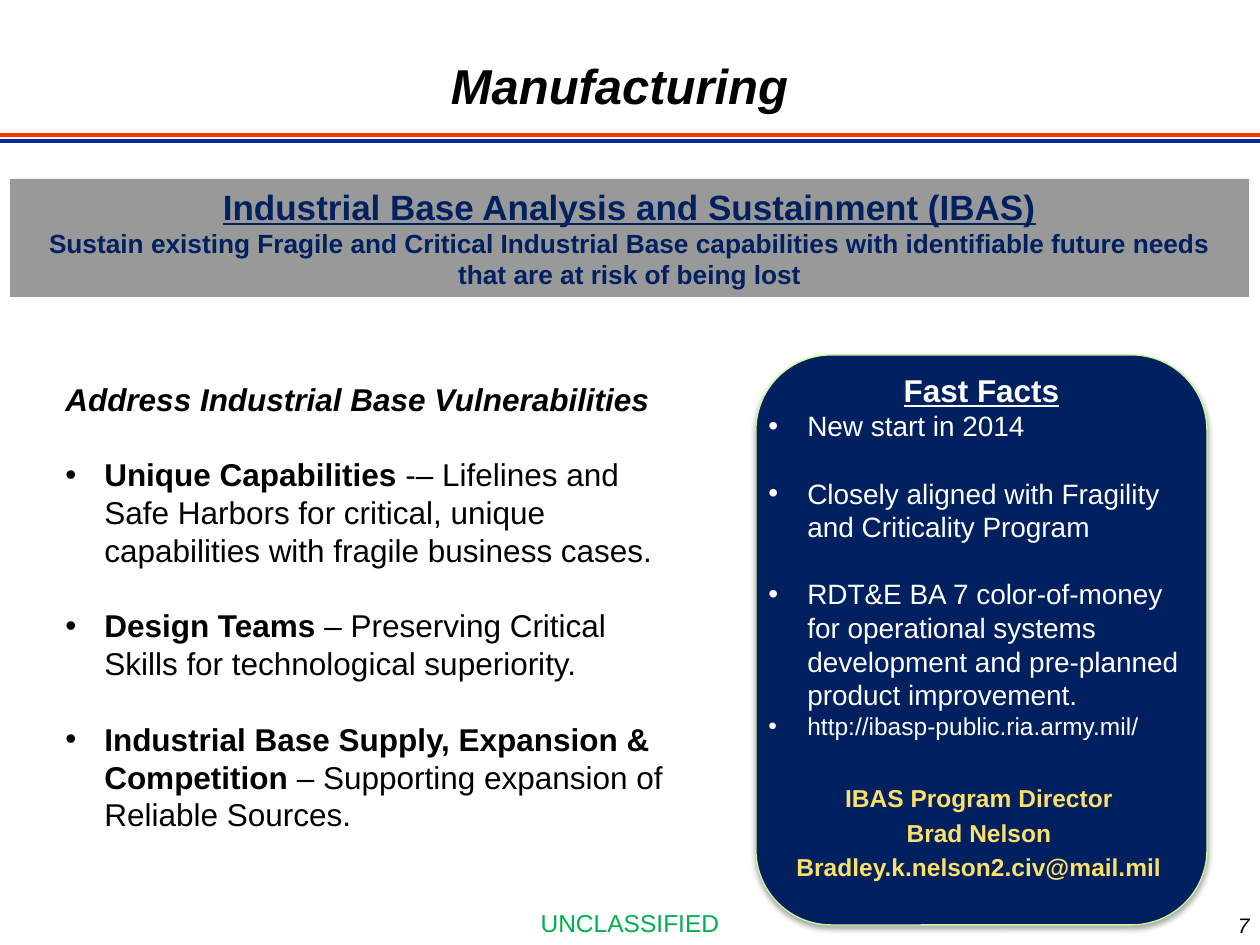
from lxml.etree import SubElement
from pptx import Presentation
from pptx.dml.color import RGBColor
from pptx.enum.shapes import MSO_CONNECTOR, MSO_SHAPE
from pptx.enum.text import MSO_ANCHOR, PP_ALIGN as ALIGN
from pptx.oxml.ns import qn
from pptx.util import Pt

EMU_PER_PX = 914400 / 126
INDENT = 39
LEADING = 1.2  # line pitch as a multiple of the type size
FONT = "Arial"

BLACK = RGBColor(0x00, 0x00, 0x00)
WHITE = RGBColor(0xFF, 0xFF, 0xFF)
NAVY = RGBColor(0x00, 0x20, 0x60)
GREY = RGBColor(0x99, 0x99, 0x99)
YELLOW = RGBColor(0xFD, 0xE0, 0x67)
GREEN = RGBColor(0x00, 0xB0, 0x50)
LIME = RGBColor(0xC8, 0xFC, 0x93)
RULE_BLUE = RGBColor(0x03, 0x2A, 0xA1)
RULE_RED = RGBColor(0xFF, 0x33, 0x00)

CAPABILITIES = [
    ("Unique Capabilities ",
     "-– Lifelines and Safe Harbors for critical, unique capabilities "
     "with fragile business cases."),
    ("Design Teams ",
     "– Preserving Critical Skills for technological superiority."),
    ("Industrial Base Supply, Expansion & Competition",
     " – Supporting expansion of Reliable Sources."),
]
# text, size, space before
FACTS = [
    ("New start in 2014", 16, 0),
    ("Closely aligned with Fragility and Criticality Program", 16, 19.2),
    ("RDT&E BA 7 color-of-money for operational systems development and "
     "pre-planned product improvement.", 16, 19.2),
    ("http://ibasp-public.ria.army.mil/", 14, 0),
]
CONTACT = ["IBAS Program Director", "Brad Nelson",
           "Bradley.k.nelson2.civ@mail.mil"]


def px(length):
    return round(length * EMU_PER_PX)


def add_rule(slide, y, color, width):
    rule = slide.shapes.add_connector(
        MSO_CONNECTOR.STRAIGHT, 0, px(y), px(1260), px(y))
    rule.line.color.rgb = color
    rule.line.width = Pt(width)
    SubElement(rule._element.spPr, qn("a:effectLst"))


def add_panel(slide, preset, box, fill):
    panel = slide.shapes.add_shape(preset, *map(px, box))
    panel.shadow.inherit = False
    panel.fill.solid()
    panel.fill.fore_color.rgb = fill
    panel.line.fill.background()
    return panel


def add_shadow(panel):
    effects = panel._element.spPr.find(qn("a:effectLst"))
    shadow = SubElement(effects, qn("a:outerShdw"), blurRad=str(Pt(3.1)),
                        dist=str(Pt(1.8)), dir="5400000", rotWithShape="0")
    color = SubElement(shadow, qn("a:srgbClr"), val="000000")
    SubElement(color, qn("a:alpha"), val="35000")


def add_text_box(slide, box):
    frame = slide.shapes.add_textbox(*map(px, box)).text_frame
    frame.word_wrap = True
    return frame


def add_bullet(paragraph):
    properties = paragraph._p.get_or_add_pPr()
    properties.set("marL", str(px(INDENT)))
    properties.set("indent", str(-px(INDENT)))
    SubElement(properties, qn("a:buFont"), typeface=FONT)
    SubElement(properties, qn("a:buChar"), char="•")


def add_line(frame, text, size, color, align=ALIGN.LEFT, before=0, bullet=False,
             bold=False, italic=False, underline=False):
    """Fill the frame's empty first paragraph, or append a new one."""
    paragraph = frame.paragraphs[0]
    if paragraph.runs:
        paragraph = frame.add_paragraph()
    paragraph.text = text
    if bullet:
        add_bullet(paragraph)
    paragraph.alignment = align
    paragraph.line_spacing = Pt(size * LEADING)
    paragraph.space_before = Pt(before)
    font = paragraph.runs[0].font
    font.name, font.size, font.color.rgb = FONT, Pt(size), color
    font.bold, font.italic, font.underline = bold, italic, underline
    return paragraph


def add_plain_run(paragraph, text, size, color):
    run = paragraph.add_run()
    run.text = text
    run.font.name, run.font.size, run.font.bold = FONT, Pt(size), False
    run.font.color.rgb = color


def add_frame_elements(slide):
    add_rule(slide, 141, RULE_BLUE, 2.25)
    add_rule(slide, 135, RULE_RED, 2)
    marking = add_text_box(slide, (0, 902, 1260, 43))
    add_line(marking, "UNCLASSIFIED", 14, GREEN, ALIGN.CENTER)
    title = add_text_box(slide, (126, 42, 987, 94))
    title.vertical_anchor = MSO_ANCHOR.MIDDLE
    heading = add_line(title, "Manufacturing", 28, BLACK, ALIGN.CENTER,
                       bold=True, italic=True)
    heading.line_spacing = 0.85
    number = add_text_box(slide, (1000, 906, 262, 34))
    add_line(number, "7", 12, BLACK, ALIGN.RIGHT, italic=True)


def add_banner(slide):
    banner = add_panel(slide, MSO_SHAPE.RECTANGLE, (10, 179, 1239, 118), GREY)
    frame = banner.text_frame
    frame.word_wrap = True
    frame.vertical_anchor = MSO_ANCHOR.TOP
    add_line(frame, "Industrial Base Analysis and Sustainment (IBAS)", 20, NAVY,
             ALIGN.CENTER, bold=True, underline=True)
    add_line(frame, "Sustain existing Fragile and Critical Industrial Base "
             "capabilities with identifiable future needs that are at risk of "
             "being lost", 15, NAVY, ALIGN.CENTER, bold=True)


def add_capabilities(slide):
    frame = add_text_box(slide, (53, 381, 640, 464))
    heading = add_line(frame, "Address Industrial Base Vulnerabilities", 18,
                       BLACK, bold=True, italic=True)
    heading.line_spacing = Pt(17.3)
    for name, detail in CAPABILITIES:
        item = add_line(frame, name, 18, BLACK, before=21.6, bullet=True,
                        bold=True)
        add_plain_run(item, detail, 18, BLACK)


def add_fast_facts(slide):
    card = add_panel(slide, MSO_SHAPE.ROUNDED_RECTANGLE,
                     (756, 355, 451, 570), NAVY)
    card.line.color.rgb = LIME
    card.line.width = Pt(0.75)
    add_shadow(card)

    contact = add_text_box(slide, (777, 777, 404, 120))
    for index, text in enumerate(CONTACT):
        add_line(contact, text, 14, YELLOW, ALIGN.CENTER,
                 before=2.8 if index else 0, bold=True)

    facts = add_text_box(slide, (756, 365, 451, 386))
    add_line(facts, "Fast Facts", 18, WHITE, ALIGN.CENTER, bold=True,
             underline=True)
    for text, size, before in FACTS:
        add_line(facts, text, size, WHITE, before=before, bullet=True)


def main():
    deck = Presentation()
    deck.slide_width, deck.slide_height = px(1260), px(945)
    slide = deck.slides.add_slide(deck.slide_layouts[6])
    add_frame_elements(slide)
    add_capabilities(slide)
    add_fast_facts(slide)
    add_banner(slide)
    deck.save("out.pptx")


if __name__ == "__main__":
    main()
